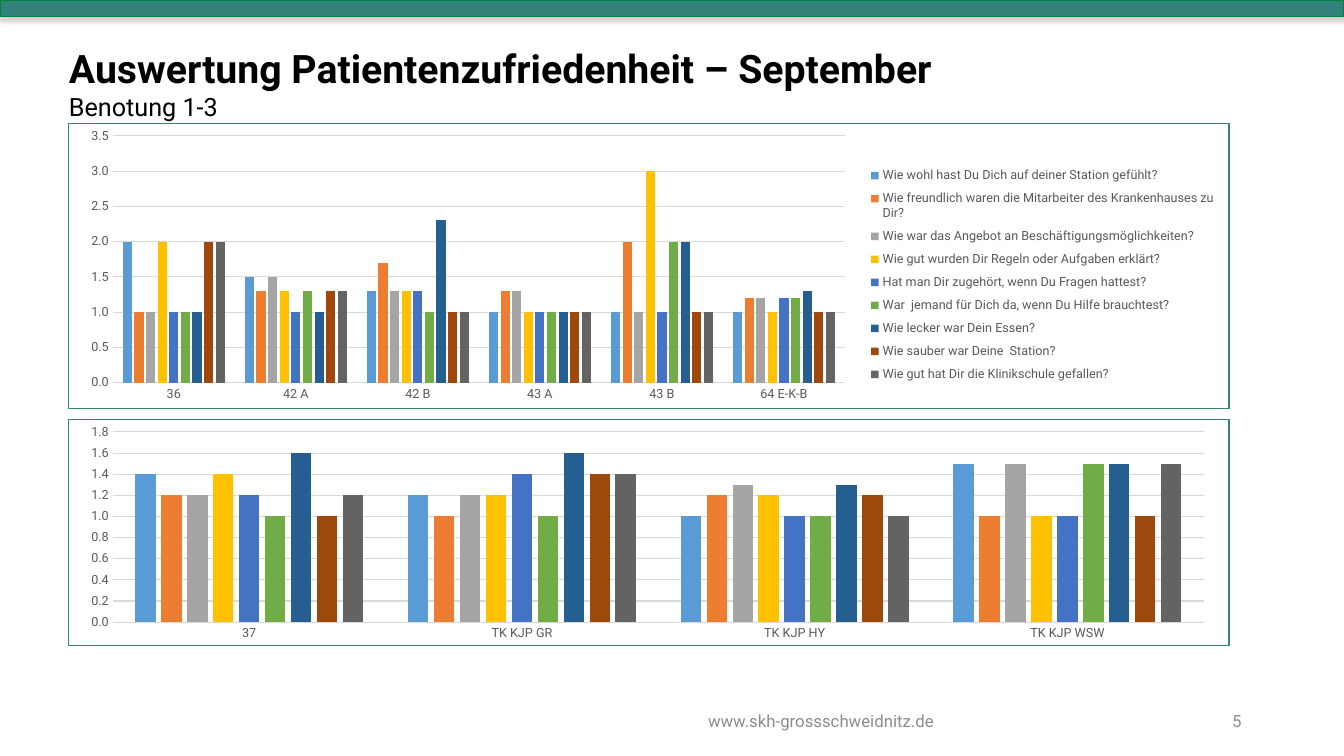
import lxml.etree
import pptx
import pptx.chart.data
import pptx.dml.color
import pptx.enum.chart
import pptx.enum.shapes
import pptx.enum.text
import pptx.oxml
import pptx.oxml.ns
import pptx.util


class Theme:
    font = "Roboto"
    band, edge, frame = "328279", "008442", "358479"
    ink, label, foot, grid, shade = "000000", "595959", "8C8C8C", "D9D9D9", "808080"
    bars = ["5B9BD5", "ED7D31", "A5A5A5", "FFC000", "4472C4",
            "70AD47", "255E91", "9E480E", "636363"]
    head, sub, small, base, tick = 28, 18, 12, 10, 9
    hair = 0.75


PX = 9525  # EMU in one px, 96 px to the inch
rgb = pptx.dml.color.RGBColor.from_string
qn = pptx.oxml.ns.qn
Align = pptx.enum.text.PP_ALIGN
Anchor = pptx.enum.text.MSO_ANCHOR


def style(font, size, color, bold=False):
    font.name, font.size, font.bold = Theme.font, pptx.util.Pt(size), bold
    font.color.rgb = rgb(color)


def place(parent, index, box, size):
    """Give a plot area or legend a fixed box in px, within a chart of this size."""
    for old in parent.findall(qn("c:layout")):
        parent.remove(old)
    layout = lxml.etree.Element(qn("c:layout"))
    manual = lxml.etree.SubElement(layout, qn("c:manualLayout"))
    shares = [part / whole for part, whole in zip(box, size * 2)]
    parts = [("xMode", "edge"), ("yMode", "edge")] + list(zip("xywh", shares))
    if parent.tag == qn("c:plotArea"):
        parts.insert(0, ("layoutTarget", "inner"))
    for tag, val in parts:
        lxml.etree.SubElement(manual, qn("c:" + tag)).set("val", str(val))
    parent.insert(index, layout)


deck = pptx.Presentation()
deck.slide_width, deck.slide_height = 1280 * PX, 720 * PX
slide = deck.slides.add_slide(deck.slide_layouts[5])

# Top band
band = slide.shapes.add_shape(
    pptx.enum.shapes.MSO_SHAPE.RECTANGLE, 0, 0, 1280 * PX, 16 * PX)
band.fill.solid()
band.fill.fore_color.rgb = rgb(Theme.band)
band.line.color.rgb = rgb(Theme.edge)
band.line.width = pptx.util.Pt(Theme.hair)
band.shadow.inherit = False
NS = pptx.oxml.ns.nsdecls("a")
band.element.spPr.find(qn("a:effectLst")).append(pptx.oxml.parse_xml(
    f'<a:outerShdw {NS} blurRad="39370" dist="22860" dir="5400000" rotWithShape="0">'
    f'<a:srgbClr val="{Theme.shade}"><a:alpha val="35000"/></a:srgbClr></a:outerShdw>'))

# Title
title = slide.shapes.title
title.left, title.top, title.width, title.height = [n * PX for n in (56, 37, 844, 84)]
frame = title.text_frame
frame.word_wrap = True
frame.vertical_anchor = Anchor.TOP
frame.auto_size = pptx.enum.text.MSO_AUTO_SIZE.SHAPE_TO_FIT_TEXT
lines = [("Auswertung Patientenzufriedenheit – September", Theme.head, True),
         ("Benotung 1-3", Theme.sub, False)]
for i, (text, size, bold) in enumerate(lines):
    para = frame.add_paragraph() if i else frame.paragraphs[0]
    para.alignment = Align.LEFT
    para.space_before = pptx.util.Pt(0)
    run = para.add_run()
    run.text = text
    style(run.font, size, Theme.ink, bold)

# Footer
for text, left, width, align in [
        ("www.skh-grossschweidnitz.de", 463, 638, Align.CENTER),
        ("5", 1129, 63, Align.RIGHT)]:
    box = slide.shapes.add_textbox(left * PX, 667 * PX, width * PX, 38 * PX)
    box.text_frame.word_wrap = True
    box.text_frame.vertical_anchor = Anchor.MIDDLE
    para = box.text_frame.paragraphs[0]
    para.alignment = align
    run = para.add_run()
    run.text = text
    style(run.font, Theme.small, Theme.foot)

# Charts: one row of grades per question, one column per ward
wards = {
    "Wie wohl hast Du Dich auf deiner Station gefühlt?": [2, 1.5, 1.3, 1, 1, 1],
    "Wie freundlich waren die Mitarbeiter des Krankenhauses zu Dir?":
        [1, 1.3, 1.7, 1.3, 2, 1.2],
    "Wie war das Angebot an Beschäftigungsmöglichkeiten?": [1, 1.5, 1.3, 1.3, 1, 1.2],
    "Wie gut wurden Dir Regeln oder Aufgaben erklärt?": [2, 1.3, 1.3, 1, 3, 1],
    "Hat man Dir zugehört, wenn Du Fragen hattest?": [1, 1, 1.3, 1, 1, 1.2],
    "War  jemand für Dich da, wenn Du Hilfe brauchtest?": [1, 1.3, 1, 1, 2, 1.2],
    "Wie lecker war Dein Essen?": [1, 1, 2.3, 1, 2, 1.3],
    "Wie sauber war Deine  Station?": [2, 1.3, 1, 1, 1, 1],
    "Wie gut hat Dir die Klinikschule gefallen?": [2, 1.3, 1, 1, 1, 1],
}
clinics = [[1.4, 1.2, 1, 1.5], [1.2, 1, 1.2, 1], [1.2, 1.2, 1.3, 1.5],
           [1.4, 1.2, 1.2, 1], [1.2, 1.4, 1, 1], [1, 1, 1, 1.5],
           [1.6, 1.6, 1.3, 1.5], [1, 1.4, 1.2, 1], [1.2, 1.4, 1, 1.5]]
clinics = {f"Series {n}": vals for n, vals in enumerate(clinics, 1)}

charts = [
    (399, 216, ["37", "TK KJP GR", "TK KJP HY", "TK KJP WSW"], clinics,
     1.8, 0.2, (42, 12, 1040, 182), None),
    (117, 273, ["36", "42 A", "42 B", "43 A", "43 B", "64 E-K-B"], wards,
     3.5, 0.5, (42, 12, 698, 236), (762, 35, 332, 220)),
]
for top, height, cats, rows, peak, step, area, key in charts:
    size = (1106, height)
    data = pptx.chart.data.CategoryChartData()
    data.categories = cats
    for name, vals in rows.items():
        data.add_series(name, vals)
    chart = slide.shapes.add_chart(
        pptx.enum.chart.XL_CHART_TYPE.COLUMN_CLUSTERED,
        65 * PX, top * PX, size[0] * PX, height * PX, data).chart
    style(chart.font, Theme.base, Theme.ink)
    chart.has_title = False

    plot = chart.plots[0]
    plot.gap_width, plot.overlap = 219, -27
    plot.vary_by_categories = False
    for bar, color in zip(plot.series, Theme.bars):
        bar.format.fill.solid()
        bar.format.fill.fore_color.rgb = rgb(color)

    for axis in (chart.category_axis, chart.value_axis):
        axis.major_tick_mark = axis.minor_tick_mark = pptx.enum.chart.XL_TICK_MARK.NONE
        style(axis.tick_labels.font, Theme.tick, Theme.label)
    scale = chart.value_axis
    scale.minimum_scale, scale.maximum_scale, scale.major_unit = 0, peak, step
    scale.tick_labels.number_format = "0.0"
    scale.tick_labels.number_format_is_linked = False
    scale.format.line.fill.background()
    for rule in (chart.category_axis.format.line, scale.major_gridlines.format.line):
        rule.color.rgb = rgb(Theme.grid)
        rule.width = pptx.util.Pt(Theme.hair)

    root = chart.element.find(qn("c:chart"))
    place(root.find(qn("c:plotArea")), 0, area, size)
    chart.has_legend = key is not None
    if key:
        chart.legend.position = pptx.enum.chart.XL_LEGEND_POSITION.RIGHT
        chart.legend.include_in_layout = False
        style(chart.legend.font, Theme.tick, Theme.label)
        place(root.find(qn("c:legend")), 1, key, size)
    root.addnext(pptx.oxml.parse_xml(
        f'<c:spPr {pptx.oxml.ns.nsdecls("c", "a")}><a:noFill/>'
        f'<a:ln w="{pptx.util.Pt(Theme.hair)}"><a:solidFill>'
        f'<a:srgbClr val="{Theme.frame}"/></a:solidFill></a:ln></c:spPr>'))

deck.save("out.pptx")
